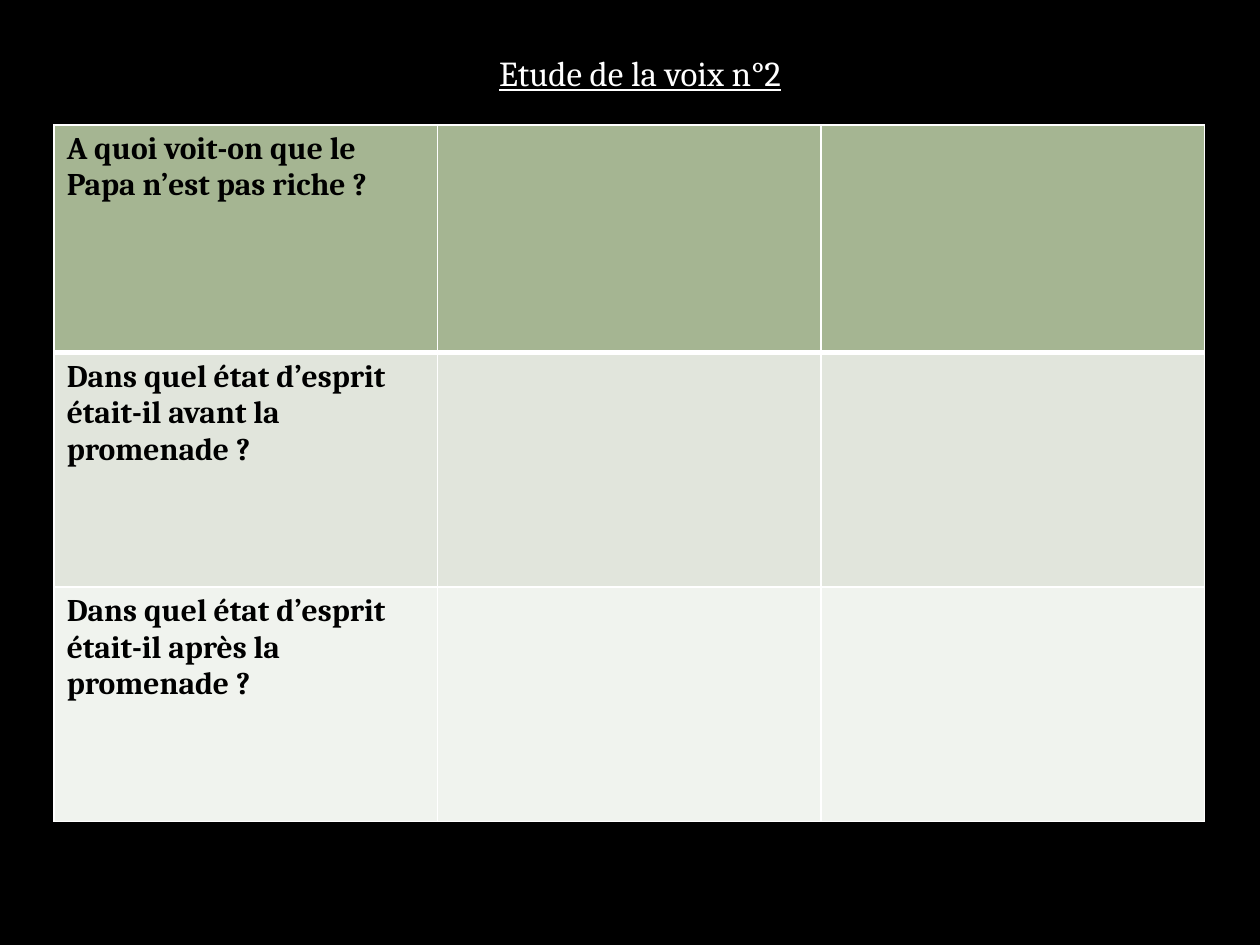
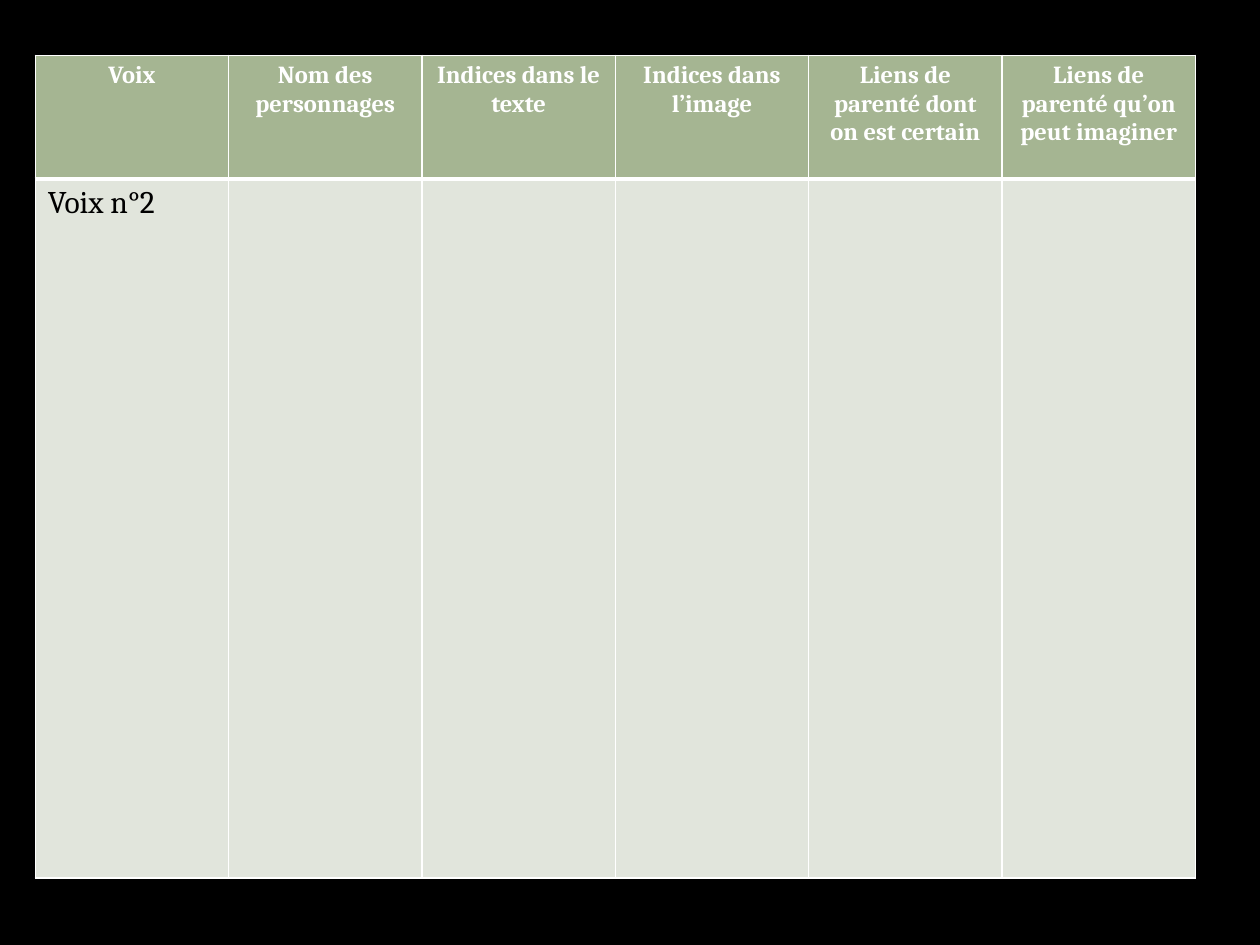
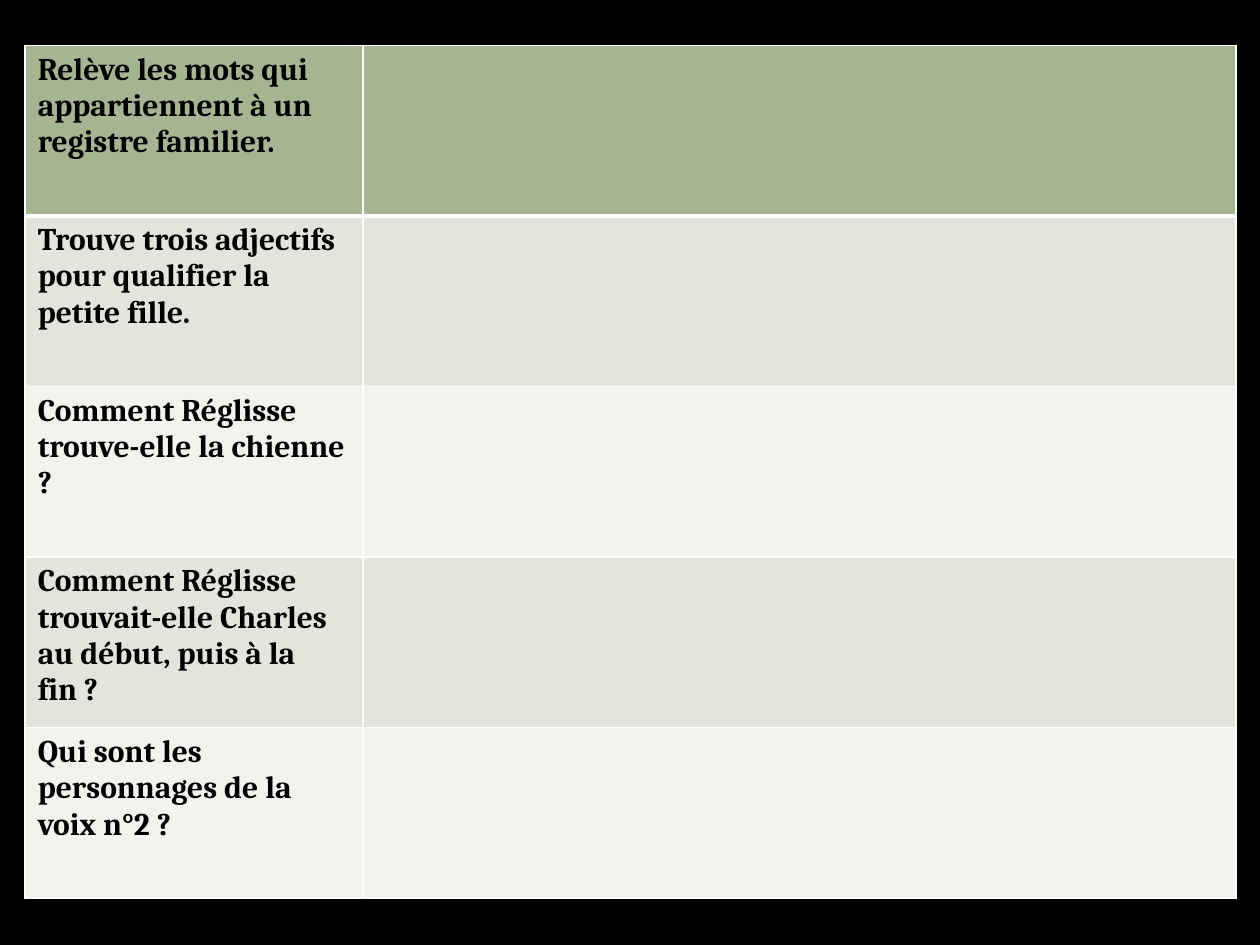
from lxml import etree
from pptx import Presentation
from pptx import util as u
from pptx.dml.color import RGBColor
from pptx.enum import text
from pptx.oxml import ns

# Shared look
FONT = "Cambria"
BLACK = RGBColor(0x00, 0x00, 0x00)
WHITE = RGBColor(0xFF, 0xFF, 0xFF)
HEADER_GREEN = RGBColor(0xA5, 0xB5, 0x92)
BANDS = [RGBColor(0xE1, 0xE5, 0xDC), RGBColor(0xF0, 0xF3, 0xEE)]
THIN, THICK = u.Pt(1), u.Pt(3)
TITLE_ONLY, BLANK = 5, 6


def format_text(text_frame, size, color, bold=False, underline=False, alignment=None):
    for paragraph in text_frame.paragraphs:
        paragraph.alignment = alignment
        for run in paragraph.runs:
            run.font.name = FONT
            run.font.size = u.Pt(size)
            run.font.bold = bold
            run.font.underline = underline
            run.font.color.rgb = color


def add_border(cell, side, width):
    properties = cell._tc.get_or_add_tcPr()
    line = etree.SubElement(properties, ns.qn(f"a:ln{side}"), w=str(width))
    fill = etree.SubElement(line, ns.qn("a:solidFill"))
    etree.SubElement(fill, ns.qn("a:srgbClr"), val=str(WHITE))


presentation = Presentation()
presentation.slide_width = u.Inches(10)
presentation.slide_height = u.Inches(7.5)

# Contents: the first column holds the questions, the other cells stay free for answers
feelings = [
    ["A quoi voit-on que le Papa n’est pas riche ?"],
    ["Dans quel état d’esprit était-il avant la promenade ?"],
    ["Dans quel état d’esprit était-il après la promenade ?"],
]
characters = [
    ["Voix", "Nom des personnages", "Indices dans le texte", "Indices dans l’image",
     "Liens de parenté dont on est certain", "Liens de parenté qu’on peut imaginer"],
    ["Voix n°2"],
]
vocabulary = [
    ["Relève les mots qui appartiennent à un registre familier."],
    ["Trouve trois adjectifs pour qualifier la petite fille."],
    ["Comment Réglisse trouve-elle la chienne ?"],
    ["Comment Réglisse trouvait-elle Charles au début, puis à la fin ?"],
    ["Qui sont les personnages de la voix n°2 ?"],
]

# Header text style, body text style
question_style = dict(size=18, color=BLACK, bold=True)
heading_style = dict(size=14, color=WHITE, bold=True, alignment=text.PP_ALIGN.CENTER)
answer_style = dict(size=18, color=BLACK)

# Title, rows of text, left, top, column widths, row heights, header and body styles
pages = [
    ("Etude de la voix n°2", feelings, 0.43, 0.99, [9.13 / 3] * 3,
     [1.81] + [1.86] * 2, question_style, question_style),
    (None, characters, 0.28, 0.44, [9.21 / 6] * 6,
     [0.98, 5.55], heading_style, answer_style),
    (None, vocabulary, 0.2, 0.36, [2.68, 6.93],
     [6.77 / 5] * 5, question_style, question_style),
]

for title, rows, left, top, widths, heights, header_style, body_style in pages:
    layout = presentation.slide_layouts[TITLE_ONLY if title else BLANK]
    slide = presentation.slides.add_slide(layout)
    slide.background.fill.solid()
    slide.background.fill.fore_color.rgb = BLACK

    # Title
    if title:
        shape = slide.shapes.title
        shape.left, shape.top = u.Inches(0.67), u.Inches(0.36)
        shape.width, shape.height = u.Inches(8.82), u.Inches(0.44)
        shape.text_frame.text = title
        shape.text_frame.vertical_anchor = text.MSO_ANCHOR.TOP
        format_text(shape.text_frame, 20, WHITE, underline=True,
                    alignment=text.PP_ALIGN.CENTER)

    # Table grid
    table = slide.shapes.add_table(
        len(heights), len(widths), u.Inches(left), u.Inches(top),
        u.Inches(sum(widths)), u.Inches(sum(heights))).table
    for column, width in zip(table.columns, widths):
        column.width = u.Inches(width)
    for row, height in zip(table.rows, heights):
        row.height = u.Inches(height)

    # Cells: green header with a thick rule below, then alternating bands
    for row_index, row in enumerate(table.rows):
        is_header = row_index == 0
        for column_index, cell in enumerate(row.cells):
            add_border(cell, "L", THIN)
            add_border(cell, "R", THIN)
            add_border(cell, "T", THICK if row_index == 1 else THIN)
            add_border(cell, "B", THICK if is_header else THIN)
            cell.fill.solid()
            cell.fill.fore_color.rgb = HEADER_GREEN if is_header else BANDS[(row_index - 1) % 2]
            if column_index < len(rows[row_index]):
                cell.text_frame.text = rows[row_index][column_index]
                format_text(cell.text_frame, **(header_style if is_header else body_style))

presentation.save("out.pptx")
